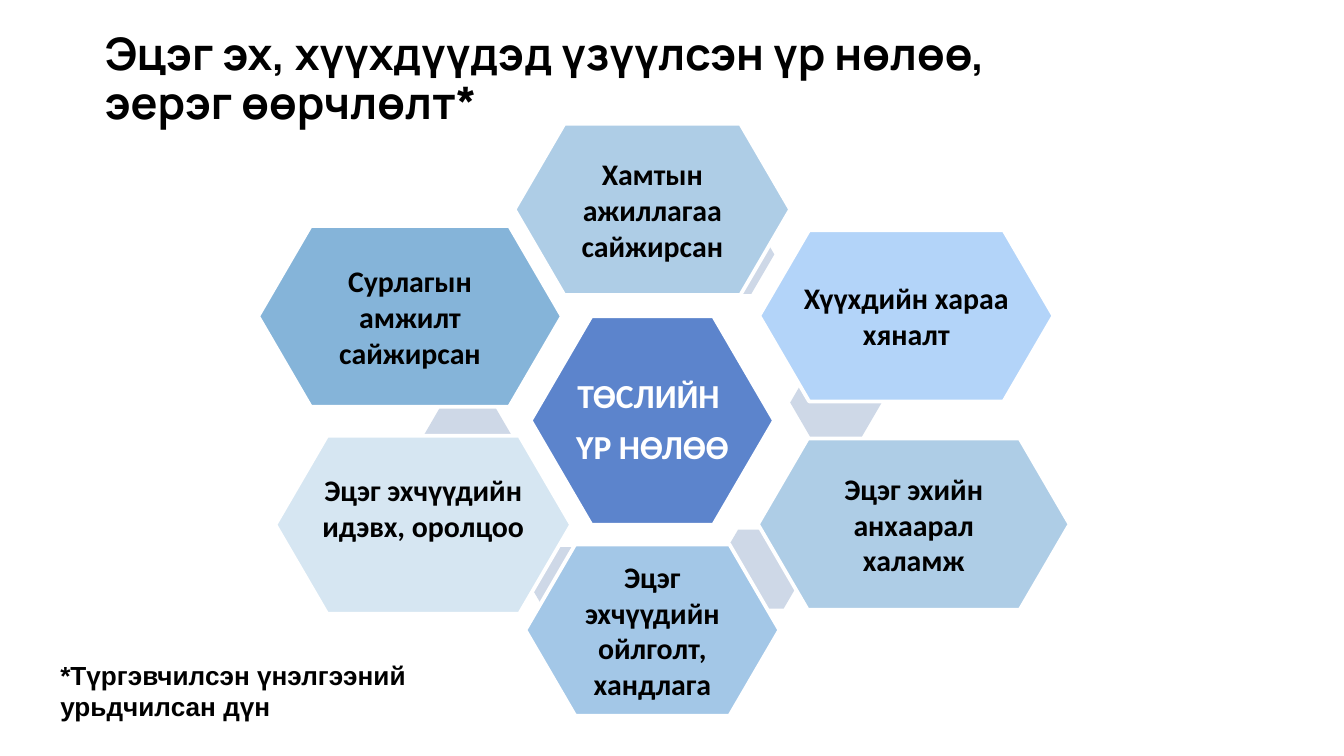
from pptx import Presentation
from pptx.dml.color import RGBColor
from pptx.enum.shapes import MSO_SHAPE
from pptx.enum.text import MSO_ANCHOR, MSO_AUTO_SIZE, PP_ALIGN
from pptx.util import Cm, Pt

COLORS = {
    "black": "000000", "white": "FFFFFF", "accent": "CED8E7", "core": "5C84CC",
    "sky": "AECDE6", "bright": "B3D4F9", "soft": "A3C7E7", "pale": "D6E6F2",
    "steel": "85B4D9",
}
TITLE = "Эцэг эх, хүүхдүүдэд үзүүлсэн үр нөлөө, эерэг өөрчлөлт*"
FOOTNOTE = "*Түргэвчилсэн үнэлгээний урьдчилсан дүн"

CORE = dict(lines=["ТӨСЛИЙН ", "ҮР НӨЛӨӨ "], center=(12.33, 7.95), size=(4.6, 3.96),
            fill="core", color="white", points=18, gap=6)
OUTCOMES = [
    dict(lines=["Хамтын ажиллагаа сайжирсан"], center=(12.33, 3.96),
         size=(5.21, 3.25), fill="sky", accent=(13.77, 4.81)),
    dict(lines=["Хүүхдийн хараа хяналт"], center=(17.13, 5.97),
         size=(5.56, 3.25), fill="bright", accent=(15.8, 7.61)),
    dict(lines=["Эцэг эхийн анхаарал халамж"], center=(17.27, 9.91),
         size=(5.89, 3.25), fill="sky", accent=(14.38, 10.76)),
    dict(lines=["Эцэг эхчүүдийн ойлголт, хандлага"], center=(12.33, 11.91),
         size=(4.8, 3.25), fill="soft", accent=(10.9, 11.09)),
    dict(lines=["Эцэг эхчүүдийн", "идэвх, оролцоо"], center=(8, 9.92),
         size=(5.59, 3.38), fill="pale", accent=(8.84, 8.29), bottom=0.7),
    dict(lines=["Сурлагын амжилт сайжирсан"], center=(7.75, 5.98),
         size=(5.74, 3.43), fill="steel"),
]
ACCENT_SIZE = (1.73, 1.5)


def rgb(name):
    return RGBColor.from_string(COLORS[name])


def style(p, font, points, color="black"):
    p.font.name, p.font.size, p.font.bold = font, Pt(points), True
    p.font.color.rgb = rgb(color)


def hexagon(s, center, size, fill):
    left, top = (c - d / 2 for c, d in zip(center, size))
    sp = s.shapes.add_shape(MSO_SHAPE.HEXAGON, Cm(left), Cm(top), *map(Cm, size))
    sp.adjustments[0], sp.adjustments[1] = 0.29, 1.15
    sp.shadow.inherit = False
    sp.fill.solid()
    sp.fill.fore_color.rgb = rgb(fill)
    sp.line.fill.background()
    return sp


def cell(s, lines, center, size, fill, color="black", points=16, gap=0,
         bottom=0.05, accent=None):
    if accent:
        hexagon(s, accent, ACCENT_SIZE, "accent")
    sp = hexagon(s, center, size, fill)
    sp.line.color.rgb = rgb("white")
    sp.line.width = Pt(2)
    tf = sp.text_frame
    tf.word_wrap = True
    tf.vertical_anchor = MSO_ANCHOR.MIDDLE
    tf.margin_left = tf.margin_right = tf.margin_top = Cm(0.05)
    tf.margin_bottom = Cm(bottom)
    tf.text = "\n".join(lines)
    for p in tf.paragraphs:
        p.alignment = PP_ALIGN.CENTER
        p.space_after = Pt(gap)
        style(p, "Calibri", points, color)


def add_title(s):
    sp = s.shapes.title
    sp.left, sp.top, sp.width, sp.height = map(Cm, (1.73, 0.36, 17.78, 1.57))
    tf = sp.text_frame
    tf.text = TITLE
    tf.word_wrap = True
    tf.auto_size = MSO_AUTO_SIZE.NONE
    tf.vertical_anchor = MSO_ANCHOR.TOP
    tf.margin_left = tf.margin_right = tf.margin_top = tf.margin_bottom = Cm(0.25)
    p = tf.paragraphs[0]
    p.alignment = PP_ALIGN.LEFT
    p.line_spacing = 0.9
    style(p, "Manrope", 24)


def add_footnote(s):
    tf = s.shapes.add_textbox(*map(Cm, (0.89, 12.34, 9.4, 1.45))).text_frame
    tf.word_wrap = True
    tf.text = FOOTNOTE
    style(tf.paragraphs[0], "Arial", 14)


def main():
    prs = Presentation()
    prs.slide_width, prs.slide_height = Cm(25.4), Cm(14.29)
    s = prs.slides.add_slide(prs.slide_layouts[5])
    add_title(s)
    for item in [CORE, *OUTCOMES]:
        cell(s, **item)
    add_footnote(s)
    prs.save("out.pptx")


if __name__ == "__main__":
    main()
